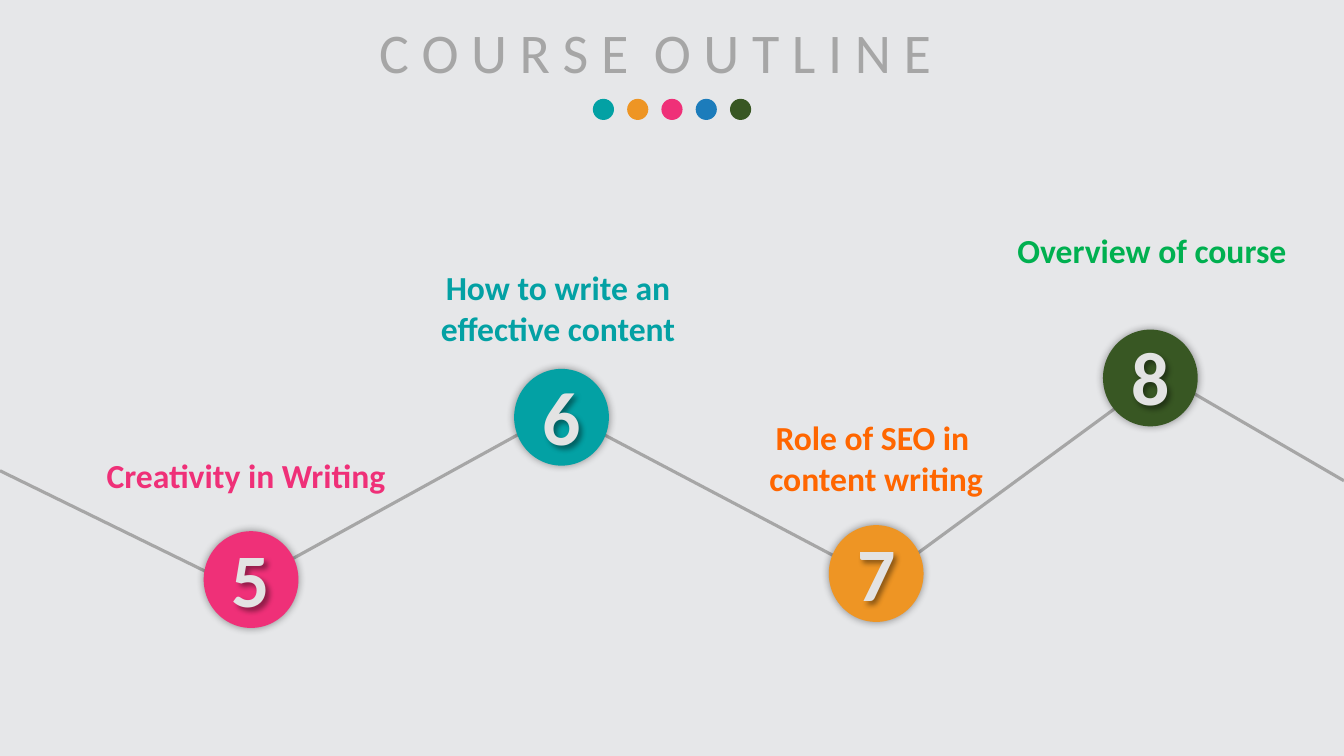
import pptx
import pptx.util
import pptx.dml.color
import pptx.enum.shapes
import pptx.enum.text
import pptx.oxml
import pptx.oxml.ns

WIDTH = pptx.util.Inches(13.33)
HEIGHT = pptx.util.Inches(7.5)
GRAY = "A6A6A6"
DOT_COLORS = ["03A1A4", "EE9524", "EF3078", "1C7CBB", "385723"]
DISC_WIDTH, DISC_HEIGHT = 7.05, 12.8

ROUTE = [
    ((100, 63.6), (88, 51.2)),
    ((17.93, 77.87), (0, 62.27)),
    ((66.02, 76.13), (84.92, 51.47)),
    ((64.82, 76.13), (44.34, 56.93)),
    ((19.5, 76.13), (40.89, 55.2)),
]
STOPS = [
    ("5", (18.68, 76.67), "EF3078", ["Creativity in Writing"],
     "EF3078", (6.75, 59.47, 23.1, 6.67)),
    ("6", (41.78, 55.2), "03A1A4", ["How to write an effective content"],
     "03A1A4", (31.28, 34.67, 20.48, 12.13)),
    ("7", (65.19, 75.87), "EE9524", ["Role of SEO in ", "content writing"],
     "FF6600", (50.49, 54.53, 29.41, 12.13)),
    ("8", (85.59, 50), "385723", ["Overview of course"],
     "00B050", (74.79, 29.73, 21.83, 12.13)),
]


def color(value):
    return pptx.dml.color.RGBColor.from_string(value)


def across(share):
    return round(WIDTH * share / 100)


def down(share):
    return round(HEIGHT * share / 100)


def area(box):
    left, top, width, height = box
    return across(left), down(top), across(width), down(height)


def write(shape, paragraphs, size, fill, bold=False):
    frame = shape.text_frame
    frame.word_wrap = True
    frame.auto_size = pptx.enum.text.MSO_AUTO_SIZE.NONE
    frame.vertical_anchor = pptx.enum.text.MSO_ANCHOR.TOP
    for index, runs in enumerate(paragraphs):
        paragraph = frame.add_paragraph() if index else frame.paragraphs[0]
        paragraph.alignment = pptx.enum.text.PP_ALIGN.CENTER
        for text, spacing in runs:
            run = paragraph.add_run()
            run.text = text
            run.font.name = "Calibri"
            run.font.size = pptx.util.Pt(size)
            run.font.bold = bold
            run.font.color.rgb = color(fill)
            if spacing:
                run.font._element.set("spc", str(spacing * 100))


def add_text(slide, box, lines, size, fill):
    shape = slide.shapes.add_textbox(*area(box))
    write(shape, [[(line, 0)] for line in lines], size, fill, bold=True)
    return shape


def add_shadow(shape, blur, distance=0):
    shape.shadow.inherit = False
    effects = shape._element.spPr.find(pptx.oxml.ns.qn("a:effectLst"))
    effects.append(pptx.oxml.parse_xml(
        f'<a:outerShdw {pptx.oxml.ns.nsdecls("a")} blurRad="{pptx.util.Pt(blur)}" '
        f'dist="{pptx.util.Pt(distance)}" dir="2700000" algn="ctr" rotWithShape="0">'
        '<a:srgbClr val="000000"><a:alpha val="40000"/></a:srgbClr></a:outerShdw>'))


def add_circle(shapes, left, top, width, height, fill):
    shape = shapes.add_shape(
        pptx.enum.shapes.MSO_SHAPE.OVAL, left, top, width, height)
    shape.shadow.inherit = False
    shape.fill.solid()
    shape.fill.fore_color.rgb = color(fill)
    shape.line.fill.background()
    return shape


def add_title(slide, box):
    title = slide.shapes.title
    title.left, title.top, title.width, title.height = area(box)
    words = [("C O U R S E", 0), (" ", 9), ("O U T L I N E ", 0)]
    write(title, [words], 40, GRAY)


def add_dots(slide, box):
    left, top, width, size = area(box)
    pitch = (width - size) / (len(DOT_COLORS) - 1)
    group = slide.shapes.add_group_shape()
    for index, fill in enumerate(DOT_COLORS):
        add_circle(group.shapes, round(left + index * pitch), top, size, size, fill)


def add_route(slide):
    for start, end in ROUTE:
        connector = slide.shapes.add_connector(
            pptx.enum.shapes.MSO_CONNECTOR.STRAIGHT,
            across(start[0]), down(start[1]), across(end[0]), down(end[1]))
        connector.line.color.rgb = color(GRAY)
        connector.line.width = pptx.util.Pt(2.25)
        connector._element.spPr.append(
            pptx.oxml.parse_xml(f'<a:effectLst {pptx.oxml.ns.nsdecls("a")}/>'))


def add_stop(slide, number, center, fill, lines, label_color, label_box):
    x, y = center
    disc_box = (x - DISC_WIDTH / 2, y - DISC_HEIGHT / 2, DISC_WIDTH, DISC_HEIGHT)
    disc = add_circle(slide.shapes, *area(disc_box), fill)
    add_shadow(disc, 6)
    number_box = (x - 2.29, y - 6.95, 4.58, 13.47)
    digit = add_text(slide, number_box, [number], 54, "E3E3E3")
    add_shadow(digit, 4, 3)
    add_text(slide, label_box, lines, 24, label_color)


def add_outline(presentation):
    slide = presentation.slides.add_slide(presentation.slide_layouts[5])
    slide.background.fill.solid()
    slide.background.fill.fore_color.rgb = color("E6E7E9")
    add_title(slide, (19.35, 1.6, 59.71, 10.27))
    add_dots(slide, (44.11, 13.07, 11.78, 2.8))
    add_route(slide)
    for stop in STOPS:
        add_stop(slide, *stop)


def main():
    presentation = pptx.Presentation()
    presentation.slide_width = WIDTH
    presentation.slide_height = HEIGHT
    add_outline(presentation)
    presentation.save("out.pptx")


if __name__ == "__main__":
    main()
